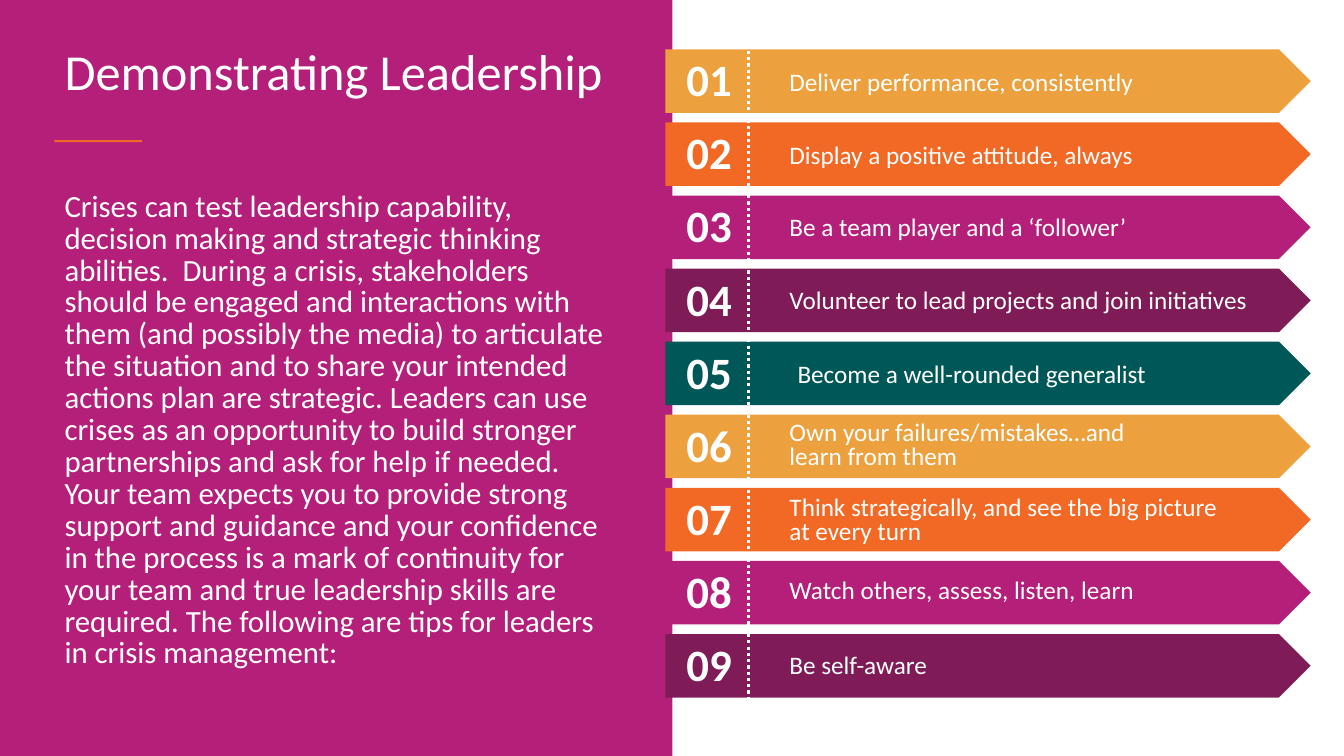
from dataclasses import dataclass

from lxml import etree
from pptx import Presentation
from pptx.dml.color import RGBColor
from pptx.enum.dml import MSO_LINE
from pptx.enum.shapes import MSO_CONNECTOR, MSO_SHAPE
from pptx.enum.text import MSO_ANCHOR, MSO_AUTO_SIZE, PP_ALIGN
from pptx.oxml.ns import qn
from pptx.util import Inches, Pt

RECT, ARROW = MSO_SHAPE.RECTANGLE, MSO_SHAPE.PENTAGON
STRAIGHT, DOTTED = MSO_CONNECTOR.STRAIGHT, MSO_LINE.ROUND_DOT
TOP, MIDDLE = MSO_ANCHOR.TOP, MSO_ANCHOR.MIDDLE
LEFT = PP_ALIGN.LEFT
FIXED, GROW = MSO_AUTO_SIZE.NONE, MSO_AUTO_SIZE.SHAPE_TO_FIT_TEXT


@dataclass(frozen=True)
class Theme:
    font: str = "Calibri"
    white: str = "FFFFFF"
    magenta: str = "B41F7A"
    amber: str = "EDA13E"
    orange: str = "F16924"
    plum: str = "7F1C58"
    teal: str = "005757"
    title: int = 36
    body: int = 22
    number: int = 32
    label: int = 18


THEME = Theme()

INTRO = (
    "Crises can test leadership capability, decision making and strategic thinking "
    "abilities.  During a crisis, stakeholders should be engaged and interactions with "
    "them (and possibly the media) to articulate the situation and to share your intended "
    "actions plan are strategic. Leaders can use crises as an opportunity to build stronger "
    "partnerships and ask for help if needed. Your team expects you to provide strong "
    "support and guidance and your confidence in the process is a mark of continuity for "
    "your team and true leadership skills are required. The following are tips for leaders "
    "in crisis management:"
)

# Tip text, arrow colour, label left, label width, label offset below the arrow top
TIPS = [
    ("Deliver performance, consistently", THEME.amber, 7.79, 5.1, 0.21),
    ("Display a positive attitude, always", THEME.orange, 7.79, 5.1, 0.21),
    ("Be a team player and a ‘follower’", THEME.magenta, 7.79, 5.1, 0.2),
    ("Volunteer to lead projects and join initiatives", THEME.plum, 7.79, 5.1, 0.2),
    ("Become a well-rounded generalist", THEME.teal, 7.87, 5.1, 0.21),
    ("Own your failures/mistakes…and learn from them", THEME.amber, 7.79, 3.94, 0.06),
    ("Think strategically, and see the big picture at every turn",
     THEME.orange, 7.79, 4.39, 0.08),
    ("Watch others, assess, listen, learn", THEME.magenta, 7.79, 5.1, 0.18),
    ("Be self-aware", THEME.plum, 7.79, 5.1, 0.19),
]
FIRST_TOP, LAST_TOP = 0.49, 6.29
PITCH = (LAST_TOP - FIRST_TOP) / (len(TIPS) - 1)


def set_all(target, values):
    for name, value in values.items():
        setattr(target, name, value)


def place(sp, left, top, width, height):
    box = {"left": left, "top": top, "width": width, "height": height}
    set_all(sp, {name: Inches(value) for name, value in box.items()})


def write(tf, text, size, spacing, bold=False, **frame):
    set_all(tf, {"word_wrap": True, "auto_size": FIXED, "vertical_anchor": TOP, **frame})
    p = tf.paragraphs[0]
    set_all(p, {"alignment": LEFT, "line_spacing": spacing, "space_before": Pt(0)})
    r = p.add_run()
    r.text = text
    set_all(r.font, {"name": THEME.font, "size": Pt(size), "bold": bold})
    r.font.color.rgb = RGBColor.from_string(THEME.white)


def add_block(s, kind, box, color):
    sp = s.shapes.add_shape(kind, *map(Inches, box))
    sp.shadow.inherit = False
    sp.fill.solid()
    sp.fill.fore_color.rgb = RGBColor.from_string(color)
    sp.line.fill.background()
    return sp


def add_text(s, box, text, size, spacing, **options):
    sp = s.shapes.add_textbox(*map(Inches, box))
    write(sp.text_frame, text, size, spacing, auto_size=GROW, **options)


def add_dotted_line(s, x, top, bottom):
    line = s.shapes.add_connector(STRAIGHT, *map(Inches, (x, top, x, bottom)))
    line.line.color.rgb = RGBColor.from_string(THEME.white)
    set_all(line.line, {"width": Pt(2.25), "dash_style": DOTTED})
    etree.SubElement(line.element.spPr, qn("a:effectLst"))


def add_tip(s, index, tip):
    text, color, left, width, offset = tip
    top = FIRST_TOP + index * PITCH
    add_block(s, ARROW, (6.6, top, 6.4, 0.63), color)
    add_text(s, (6.71, top + 0.22, 0.93, 0.42), f"{index + 1:02}", THEME.number,
             Pt(18.6), bold=True, vertical_anchor=MIDDLE)
    insets = {"margin_left": Inches(0.04), "margin_right": Inches(0.04),
              "margin_top": Inches(0.02), "margin_bottom": Inches(0.02)}
    height = 0.52 if width < 5 else 0.28
    add_text(s, (left, top + offset, width, height), text, THEME.label, Pt(17.1), **insets)


def add_intro(s):
    title, body = s.shapes.title, s.placeholders[1]
    # The panel goes behind the title and the body
    panel = add_block(s, RECT, (0, 0, 6.67, 7.5), THEME.magenta)
    title.element.addprevious(panel.element)

    place(title, 0.54, 0.42, 5.76, 0.8)
    write(title.text_frame, "Demonstrating Leadership", THEME.title, 0.9)
    add_block(s, RECT, (0.54, 1.39, 0.87, 0.02), THEME.orange)

    place(body, 0.54, 1.85, 5.6, 5.4)
    pPr = body.text_frame.paragraphs[0]._p.get_or_add_pPr()
    pPr.set("marL", "0")
    pPr.set("indent", "0")
    etree.SubElement(pPr, qn("a:buNone"))
    write(body.text_frame, INTRO, THEME.body, Pt(22.8))


def main():
    prs = Presentation()
    prs.slide_width, prs.slide_height = Inches(13.33), Inches(7.5)
    s = prs.slides.add_slide(prs.slide_layouts[1])

    # Left: title and introduction
    add_intro(s)

    # Right: numbered tips with one dotted divider across them
    for index, tip in enumerate(TIPS):
        add_tip(s, index, tip)
    add_dotted_line(s, 7.42, 0.07, 7.5)

    prs.save("out.pptx")


if __name__ == "__main__":
    main()
